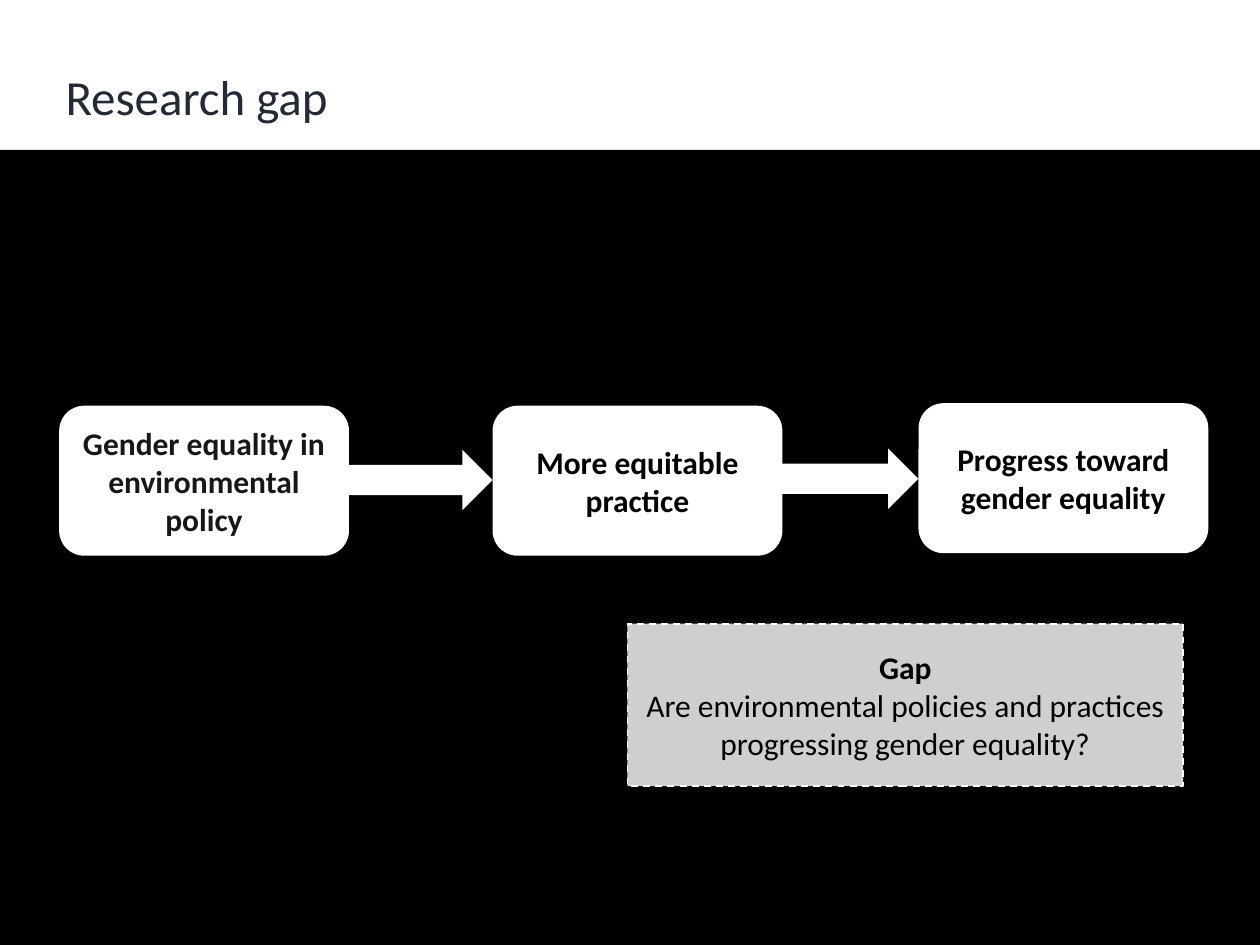
import dataclasses

import pptx
import pptx.dml.color
import pptx.enum.dml
import pptx.enum.shapes
import pptx.enum.text
import pptx.oxml
import pptx.oxml.ns
import pptx.util

Inches = pptx.util.Inches
SHAPE = pptx.enum.shapes.MSO_SHAPE
ALIGN = pptx.enum.text.PP_ALIGN
ANCHOR = pptx.enum.text.MSO_ANCHOR


@dataclasses.dataclass(frozen=True)
class Theme:
    """Colours, font and type sizes of the slide."""
    font: str = "Calibri"
    title_size: int = 28
    body_size: int = 18
    title: str = "222A35"
    white: str = "FFFFFF"
    black: str = "000000"
    soft_black: str = "181717"


THEME = Theme()


def rgb(color):
    """Return the colour object for a hex string."""
    return pptx.dml.color.RGBColor.from_string(color)


def set_font(p, size, color, bold=False):
    """Set the font of a whole paragraph."""
    p.font.name = THEME.font
    p.font.size = pptx.util.Pt(size)
    p.font.bold = bold
    p.font.color.rgb = rgb(color)


def add_title(s, text):
    """Place the title at the top left of the slide."""
    sp = s.shapes.title
    sp.left, sp.top = Inches(0.42), Inches(0.48)
    sp.width, sp.height = Inches(8.1), Inches(0.57)
    tf = sp.text_frame
    tf.text = text
    tf.word_wrap = True
    tf.vertical_anchor = ANCHOR.TOP
    tf.auto_size = pptx.enum.text.MSO_AUTO_SIZE.SHAPE_TO_FIT_TEXT
    p = tf.paragraphs[0]
    p.alignment = ALIGN.LEFT
    set_font(p, THEME.title_size, THEME.title)


def add_block(s, kind, left, top, width, height, fill):
    """Add a filled shape without outline or shadow."""
    sp = s.shapes.add_shape(kind, Inches(left), Inches(top), Inches(width), Inches(height))
    sp.shadow.inherit = False
    sp.fill.solid()
    sp.fill.fore_color.rgb = rgb(fill)
    sp.line.fill.background()
    return sp


def write_centred(sp, lines):
    """Write (text, colour, bold) lines in the middle of a shape."""
    tf = sp.text_frame
    tf.word_wrap = True
    tf.vertical_anchor = ANCHOR.MIDDLE
    for i, (text, color, bold) in enumerate(lines):
        p = tf.add_paragraph() if i else tf.paragraphs[0]
        p.text = text
        p.alignment = ALIGN.CENTER
        set_font(p, THEME.body_size, color, bold)


def add_step(s, left, top, text, color):
    """Add one rounded box of the chain."""
    sp = add_block(s, SHAPE.ROUNDED_RECTANGLE, left, top, 2.3, 1.19, THEME.white)
    write_centred(sp, [(text, color, True)])


def add_arrow(s, left, tip, middle):
    """Add a block arrow that points right to the next step."""
    height = 0.48
    add_block(s, SHAPE.RIGHT_ARROW, left, middle - height / 2, tip - left, height, THEME.white)


def add_gap_box(s):
    """Add the translucent dashed box that states the gap."""
    sp = add_block(s, SHAPE.RECTANGLE, 4.98, 4.95, 4.41, 1.29, THEME.white)
    color = sp.fill._xPr.find(".//" + pptx.oxml.ns.qn("a:srgbClr"))
    alpha = pptx.oxml.parse_xml(f'<a:alpha {pptx.oxml.ns.nsdecls("a")} val="81000"/>')
    color.append(alpha)
    sp.line.color.rgb = rgb(THEME.white)
    sp.line.width = pptx.util.Pt(1)
    sp.line.dash_style = pptx.enum.dml.MSO_LINE.DASH
    question = "Are environmental policies and practices progressing gender equality?"
    write_centred(sp, [("Gap", THEME.black, True), (question, THEME.black, False)])


def main():
    """Build and save the slide."""
    prs = pptx.Presentation()
    prs.slide_width, prs.slide_height = Inches(10), Inches(7.5)
    s = prs.slides.add_slide(prs.slide_layouts[5])
    add_title(s, "Research gap")
    add_block(s, SHAPE.RECTANGLE, -0.07, 1.19, 10.12, 6.31, THEME.black)
    add_gap_box(s)
    steps = [
        (0.47, 3.22, "Gender equality in environmental policy", THEME.soft_black),
        (3.91, 3.22, "More equitable practice", THEME.black),
        (7.29, 3.2, "Progress toward gender equality", THEME.black),
    ]
    for step in steps:
        add_step(s, *step)
    add_arrow(s, 2.77, 3.91, 3.81)
    add_arrow(s, 6.03, 7.29, 3.8)
    prs.save("out.pptx")


if __name__ == "__main__":
    main()
